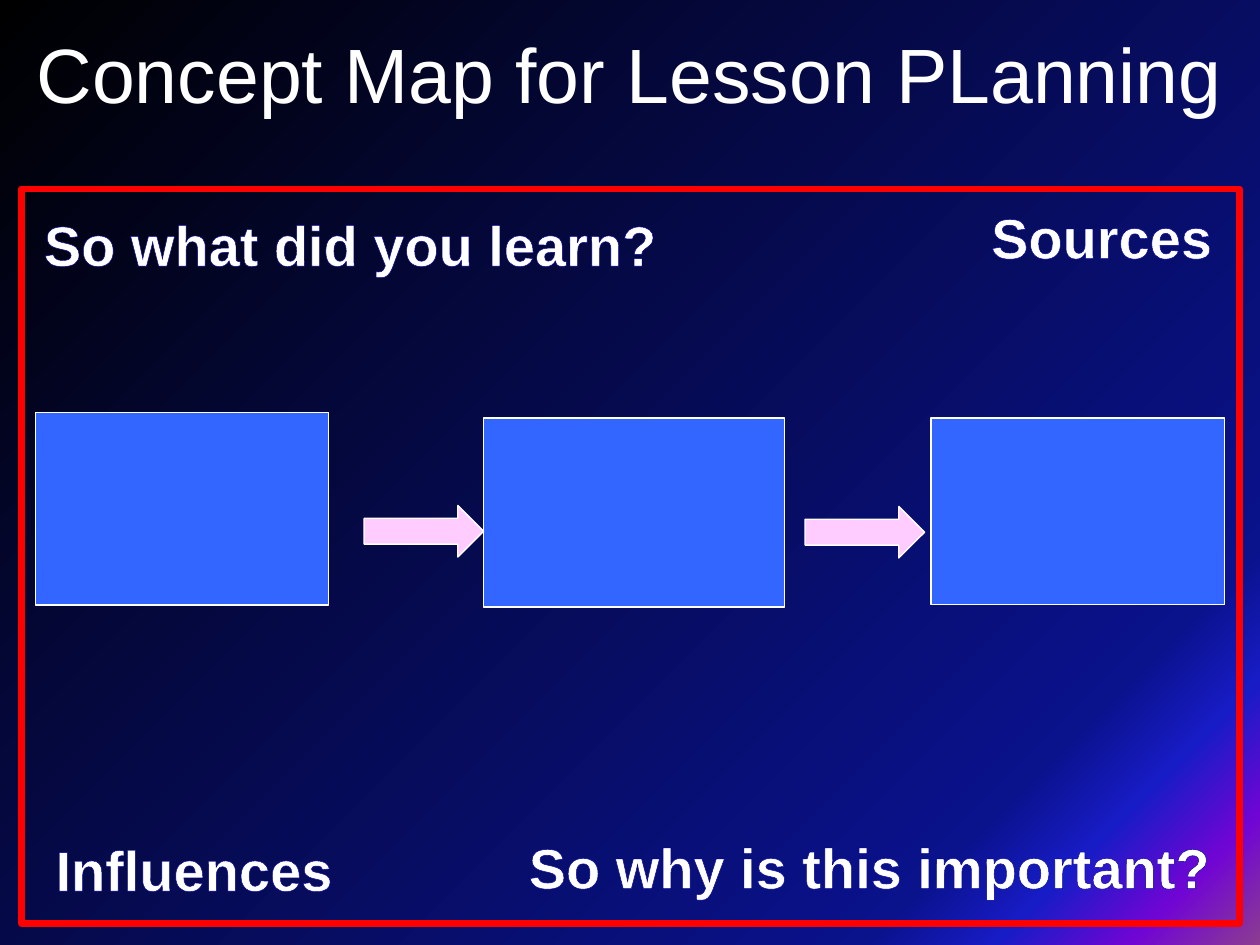
from dataclasses import dataclass

from lxml import etree
from pptx import Presentation
from pptx import util as u
from pptx.dml.color import RGBColor
from pptx.enum import shapes, text
from pptx.oxml.ns import qn


@dataclass
class Theme:
    face: str = "Arial"
    white: str = "FFFFFF"
    edge: str = "000099"
    frame: str = "FF0000"
    box: str = "3366FF"
    arrow: str = "FFCCFF"
    title: int = 44
    label: int = 32
    thin: float = 0.75
    thick: float = 3.75
    angle: int = 45
    stops: tuple = ((0, "000000"), (82, "0A128C"), (88, "181CC7"),
                    (94, "7005D4"), (100, "8C3D91"))


def apply(item, vals):
    for name, val in vals.items():
        setattr(item, name, val)


def cm(*nums):
    return [u.Cm(n) for n in nums]


class Deck:
    def __init__(self, theme):
        self.theme = theme
        self.file = Presentation()
        apply(self.file, {"slide_width": u.Cm(25.4), "slide_height": u.Cm(19.05)})
        self.slide = self.file.slides.add_slide(self.file.slide_layouts[6])

    def ground(self):
        fill = self.slide.background.fill
        fill.gradient()
        fill.gradient_angle = 360 - self.theme.angle
        stops = next(self.slide.element.iter(qn("a:gsLst")))
        for old in list(stops):
            stops.remove(old)
        for pos, color in self.theme.stops:
            stop = etree.SubElement(stops, qn("a:gs"), pos=str(pos * 1000))
            etree.SubElement(stop, qn("a:srgbClr"), val=color)

    def shape(self, kind, at, fill, line, width):
        item = self.slide.shapes.add_shape(kind, *cm(*at))
        item.shadow.inherit = False
        if fill:
            item.fill.solid()
            item.fill.fore_color.rgb = RGBColor.from_string(fill)
        else:
            item.fill.background()
        item.line.color.rgb = RGBColor.from_string(line)
        item.line.width = u.Pt(width)

    def words(self, note, at, size, frame, bold=False):
        body = self.slide.shapes.add_textbox(*cm(*at)).text_frame
        apply(body, frame)
        para = body.paragraphs[0]
        para.alignment = text.PP_ALIGN.CENTER
        run = para.add_run()
        run.text = note
        apply(run.font, {"name": self.theme.face, "size": u.Pt(size), "bold": bold})
        run.font.color.rgb = RGBColor.from_string(self.theme.white)
        return run

    def title(self, note, at):
        self.words(note, at, self.theme.title,
                   {"word_wrap": True, "vertical_anchor": text.MSO_ANCHOR.MIDDLE})

    def label(self, note, at):
        run = self.words(note, at, self.theme.label,
                         {"word_wrap": False,
                          "auto_size": text.MSO_AUTO_SIZE.SHAPE_TO_FIT_TEXT}, True)
        line = etree.Element(qn("a:ln"), w=str(u.Pt(self.theme.thin)))
        fill = etree.SubElement(line, qn("a:solidFill"))
        etree.SubElement(fill, qn("a:srgbClr"), val=self.theme.edge)
        run._r.get_or_add_rPr().insert(0, line)

    def frame(self, at):
        self.shape(shapes.MSO_SHAPE.RECTANGLE, at, None,
                   self.theme.frame, self.theme.thick)

    def box(self, at):
        self.shape(shapes.MSO_SHAPE.RECTANGLE, at, self.theme.box,
                   self.theme.white, self.theme.thin)

    def arrow(self, left, top):
        self.shape(shapes.MSO_SHAPE.RIGHT_ARROW, (left, top, 2.41, 1.04),
                   self.theme.arrow, self.theme.white, self.theme.thin)


def main():
    deck = Deck(Theme())
    deck.ground()
    deck.title("Concept Map for Lesson PLanning", (0, -0.13, 25.4, 3.18))
    deck.frame((0.43, 3.81, 24.56, 14.81))
    for note, left, top, width in (
        ("Influences", 0.84, 16.71, 6.15),
        ("Sources", 19.71, 3.96, 5),
        ("So what did you learn?", 0.43, 4.11, 13.28),
        ("So why is this important?", 10.36, 16.66, 14.35),
    ):
        deck.label(note, (left, top, width, 1.63))
    for at in ((18.77, 8.43, 5.92, 3.76), (9.75, 8.43, 6.07, 3.81),
               (0.71, 8.31, 5.92, 3.89)):
        deck.box(at)
    for left, top in ((7.34, 10.19), (16.23, 10.21)):
        deck.arrow(left, top)
    deck.file.save("out.pptx")


if __name__ == "__main__":
    main()
